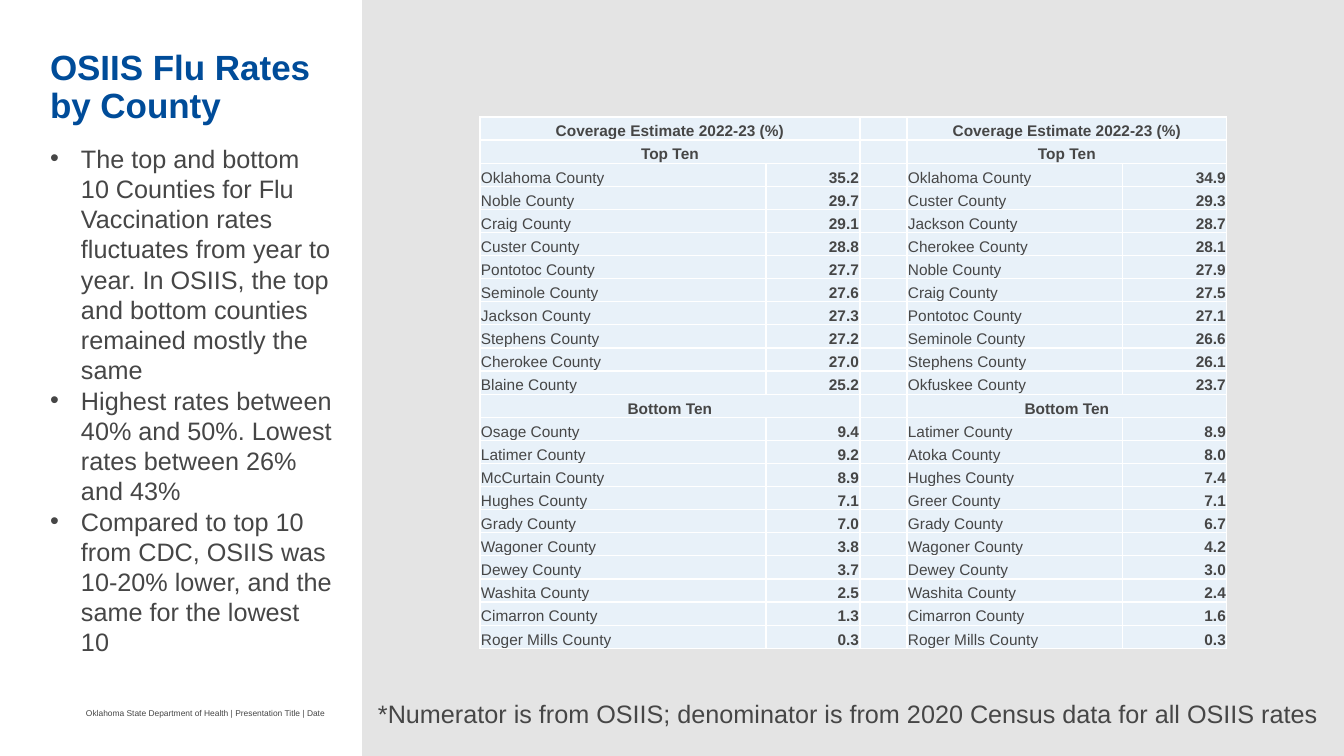
from lxml.etree import SubElement
from pptx import Presentation
from pptx.dml.color import RGBColor
from pptx.enum.shapes import MSO_SHAPE
from pptx.enum.text import MSO_ANCHOR, PP_ALIGN
from pptx.oxml.ns import qn
from pptx.util import Emu, Pt

EMU_PER_PX = 12192000 / 1344
GREY, BLUE, WHITE = "464646", "004C99", "FFFFFF"
PANEL, CELL = "E4E4E4", "E8F1F9"


def px(length):
    return Emu(round(length * EMU_PER_PX))


def add_run(paragraph, text, size, color=GREY, bold=False):
    run = paragraph.add_run()
    run.text = text
    run.font.name = "Arial"
    run.font.size = Pt(size)
    run.font.bold = bold
    run.font.color.rgb = RGBColor.from_string(color)


prs = Presentation()
prs.slide_width, prs.slide_height = px(1344), px(756)
slide = prs.slides.add_slide(prs.slide_layouts[6])

# Grey panel on the right
panel = slide.shapes.add_shape(MSO_SHAPE.RECTANGLE, px(362), 0, px(982), px(756))
panel.shadow.inherit = False
panel.fill.solid()
panel.fill.fore_color.rgb = RGBColor.from_string(PANEL)
panel.line.fill.background()

# Text blocks: box, left inset, wrap, anchor, line spacing,
# space after, size, colour, bold, bulleted, paragraphs
TOP, MIDDLE = MSO_ANCHOR.TOP, MSO_ANCHOR.MIDDLE
LEFT, RIGHT, CENTER = PP_ALIGN.LEFT, PP_ALIGN.RIGHT, PP_ALIGN.CENTER
findings = [
    "The top and bottom 10 Counties for Flu Vaccination rates fluctuates from year to year. "
    "In OSIIS, the top and bottom counties remained mostly the same",
    "Highest rates between 40% and 50%. Lowest rates between 26% and 43%",
    "Compared to top 10 from CDC, OSIIS was 10-20% lower, and the same for the lowest 10",
]
footer = "Oklahoma State Department of Health | Presentation Title | Date"
footnote = "*Numerator is from OSIIS; denominator is from 2020 Census data for all OSIIS rates"
text_blocks = [
    ((50, 45, 293, 93), 0, True, TOP, 0.9, 0, 25, BLUE, True, False,
     ["OSIIS Flu Rates by County"]),
    ((50, 138, 293, 532), 0, True, TOP, 1, 0, 18, GREY, False, True, findings),
    ((86, 703, 258, 22), 0, True, MIDDLE, 0.9, 6, 6, GREY, False, False, [footer]),
    ((368, 693, 969, 40), 10, False, TOP, 1, 0, 18, GREY, False, False, [footnote]),
]
for (box, inset, wrap, anchor, spacing, after,
     size, color, bold, bulleted, paragraphs) in text_blocks:
    frame = slide.shapes.add_textbox(*map(px, box)).text_frame
    frame.word_wrap = wrap
    frame.vertical_anchor = anchor
    frame.margin_left, frame.margin_right = px(inset), px(10)
    frame.margin_top = frame.margin_bottom = px(5)
    for i, text in enumerate(paragraphs):
        paragraph = frame.add_paragraph() if i else frame.paragraphs[0]
        paragraph.alignment = LEFT
        paragraph.line_spacing = spacing
        paragraph.space_after = Pt(after)
        add_run(paragraph, text, size, color, bold)
        if bulleted:
            properties = paragraph._p.get_or_add_pPr()
            properties.set("marL", str(px(31)))
            properties.set("indent", str(-px(31)))
            SubElement(properties, qn("a:buFont")).set("typeface", "Arial")
            SubElement(properties, qn("a:buChar")).set("char", "•")

# County coverage: headings hold one text for both sides, counties a name and rate per side
coverage = [
    ("Coverage Estimate 2022-23 (%)",),
    ("Top Ten",),
    ("Oklahoma", "35.2", "Oklahoma", "34.9"),
    ("Noble", "29.7", "Custer", "29.3"),
    ("Craig", "29.1", "Jackson", "28.7"),
    ("Custer", "28.8", "Cherokee", "28.1"),
    ("Pontotoc", "27.7", "Noble", "27.9"),
    ("Seminole", "27.6", "Craig", "27.5"),
    ("Jackson", "27.3", "Pontotoc", "27.1"),
    ("Stephens", "27.2", "Seminole", "26.6"),
    ("Cherokee", "27.0", "Stephens", "26.1"),
    ("Blaine", "25.2", "Okfuskee", "23.7"),
    ("Bottom Ten",),
    ("Osage", "9.4", "Latimer", "8.9"),
    ("Latimer", "9.2", "Atoka", "8.0"),
    ("McCurtain", "8.9", "Hughes", "7.4"),
    ("Hughes", "7.1", "Greer", "7.1"),
    ("Grady", "7.0", "Grady", "6.7"),
    ("Wagoner", "3.8", "Wagoner", "4.2"),
    ("Dewey", "3.7", "Dewey", "3.0"),
    ("Washita", "2.5", "Washita", "2.4"),
    ("Cimarron", "1.3", "Cimarron", "1.6"),
    ("Roger Mills", "0.3", "Roger Mills", "0.3"),
]
column_widths = [286, 94, 47, 216, 104]
table = slide.shapes.add_table(len(coverage), len(column_widths), px(480), px(117),
                               px(sum(column_widths)), px(532)).table
table.first_row = table.horz_banding = False
for column, width in zip(table.columns, column_widths):
    column.width = px(width)

for r, entry in enumerate(coverage):
    table.rows[r].height = px(532 / len(coverage))
    if len(entry) == 1:
        texts = [entry[0], "", "", entry[0], ""]
        alignments = [CENTER] * 5
        for c in (0, 3):
            table.cell(r, c).merge(table.cell(r, c + 1))
    else:
        name, rate, other_name, other_rate = entry
        texts = [f"{name} County", rate, "", f"{other_name} County", other_rate]
        alignments = [LEFT, RIGHT, LEFT, LEFT, RIGHT]

    for c, (text, align) in enumerate(zip(texts, alignments)):
        cell = table.cell(r, c)
        cell.vertical_anchor = MSO_ANCHOR.BOTTOM
        cell.margin_left = cell.margin_right = cell.margin_top = px(1)
        cell.margin_bottom = 0
        paragraph = cell.text_frame.paragraphs[0]
        paragraph.alignment = align
        if text:
            add_run(paragraph, text, 11, bold=align != LEFT)
        else:
            # Keep empty cells from stretching the row
            SubElement(paragraph._p, qn("a:endParaRPr")).set("sz", "1100")

        # White borders go before the fill
        cell_properties = cell._tc.get_or_add_tcPr()
        for side in ("a:lnL", "a:lnR", "a:lnT", "a:lnB"):
            border = SubElement(cell_properties, qn(side), w=str(Pt(1)))
            border_fill = SubElement(border, qn("a:solidFill"))
            SubElement(border_fill, qn("a:srgbClr")).set("val", WHITE)
        cell.fill.solid()
        cell.fill.fore_color.rgb = RGBColor.from_string(CELL)

prs.save("out.pptx")
